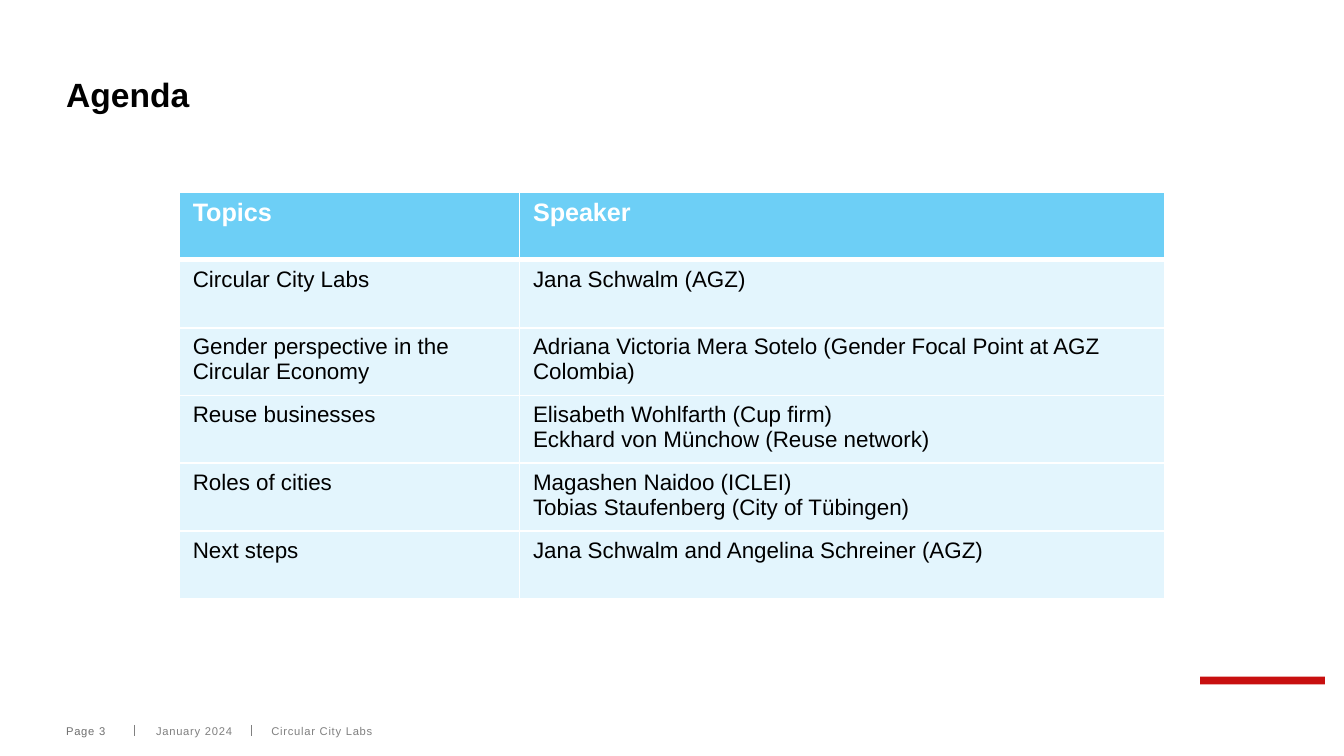
from dataclasses import dataclass

from pptx import Presentation
from pptx.dml.color import RGBColor
from pptx.enum.shapes import MSO_CONNECTOR, MSO_SHAPE
from pptx.enum.text import MSO_ANCHOR, MSO_AUTO_SIZE, PP_ALIGN
from pptx.oxml.ns import qn
from pptx.oxml.xmlchemy import OxmlElement
from pptx.util import Cm, Pt


@dataclass(frozen=True)
class Theme:
    font: str = "Arial"
    ink: str = "000000"
    paper: str = "FFFFFF"
    sky: str = "6DCFF6"
    accent: str = "C80F0F"
    muted: str = "808080"
    page_number: str = "6F6F6F"
    body_opacity: int = 19
    title_size: float = 18
    header_size: float = 13.5
    body_size: float = 12
    footer_size: float = 6
    grid_width: float = 1
    header_rule_width: float = 3


def add_child(parent, tag, **attributes):
    child = OxmlElement(tag)
    for name, value in attributes.items():
        child.set(name, str(value))
    parent.append(child)
    return child


class AgendaSlide:
    def __init__(self, presentation, theme):
        self.theme = theme
        self.slide = presentation.slides.add_slide(presentation.slide_layouts[5])
        self.shapes = self.slide.shapes

    def style_text(self, frame, size, color, bold=False):
        font_values = {"name": self.theme.font, "size": Pt(size), "bold": bold}
        for paragraph in frame.paragraphs:
            paragraph.alignment = PP_ALIGN.LEFT
            for run in paragraph.runs:
                for name, value in font_values.items():
                    setattr(run.font, name, value)
                run.font.color.rgb = RGBColor.from_string(color)

    def format_frame(self, frame, anchor, auto_size, right=0):
        values = {"margin_left": 0, "margin_top": 0, "margin_right": Cm(right),
                  "margin_bottom": 0, "word_wrap": True,
                  "vertical_anchor": anchor, "auto_size": auto_size}
        for name, value in values.items():
            setattr(frame, name, value)

    def title(self, text, left, top, width, height):
        title = self.shapes.title
        title.left, title.top = Cm(left), Cm(top)
        title.width, title.height = Cm(width), Cm(height)
        frame = title.text_frame
        frame.text = text
        self.format_frame(frame, MSO_ANCHOR.BOTTOM, MSO_AUTO_SIZE.NONE, right=0.2)
        frame.paragraphs[0].line_spacing = 0.9
        self.style_text(frame, self.theme.title_size, self.theme.ink, bold=True)

    def bar(self, left, top, width, height):
        bar = self.shapes.add_shape(
            MSO_SHAPE.RECTANGLE, Cm(left), Cm(top), Cm(width), Cm(height))
        bar.shadow.inherit = False
        bar.fill.solid()
        bar.fill.fore_color.rgb = RGBColor.from_string(self.theme.accent)
        bar.line.fill.background()

    def divider(self, x, top, height):
        divider = self.shapes.add_connector(
            MSO_CONNECTOR.STRAIGHT, Cm(x), Cm(top), Cm(x), Cm(top + height))
        divider.line.color.rgb = RGBColor.from_string(self.theme.muted)
        divider.line.width = Pt(0.75)
        add_child(divider.element.spPr, "a:effectLst")

    def footer(self, text, left, top, width, height, color):
        box = self.shapes.add_textbox(Cm(left), Cm(top), Cm(width), Cm(height))
        frame = box.text_frame
        frame.text = text
        self.format_frame(frame, MSO_ANCHOR.MIDDLE, MSO_AUTO_SIZE.SHAPE_TO_FIT_TEXT)
        self.style_text(frame, self.theme.footer_size, color)
        frame.paragraphs[0].runs[0].font._element.set("spc", "40")

    def fill_cell(self, cell, opacity):
        cell.fill.solid()
        cell.fill.fore_color.rgb = RGBColor.from_string(self.theme.sky)
        if opacity < 100:
            color = cell._tc.tcPr.find(qn("a:solidFill"))[0]
            add_child(color, "a:alpha", val=opacity * 1000)

    def border_cell(self, cell, top, bottom):
        """Draw all four borders, placed ahead of the fill as the schema asks."""
        grid = self.theme.grid_width
        widths = {"a:lnL": grid, "a:lnR": grid, "a:lnT": top, "a:lnB": bottom}
        properties = cell._tc.get_or_add_tcPr()
        for position, (tag, width) in enumerate(widths.items()):
            border = OxmlElement(tag)
            border.set("w", str(Pt(width)))
            add_child(add_child(border, "a:solidFill"), "a:srgbClr",
                      val=self.theme.paper)
            properties.insert(position, border)

    def table(self, rows, left, top, column_widths, row_height):
        theme = self.theme
        table = self.shapes.add_table(
            len(rows), len(column_widths), Cm(left), Cm(top),
            Cm(sum(column_widths)), Cm(row_height * len(rows))).table
        for column, width in zip(table.columns, column_widths):
            column.width = Cm(width)
        for row_index, texts in enumerate(rows):
            table.rows[row_index].height = Cm(row_height)
            is_header = row_index == 0
            top_width = theme.header_rule_width if row_index == 1 else theme.grid_width
            bottom_width = theme.header_rule_width if is_header else theme.grid_width
            for column_index, text in enumerate(texts):
                cell = table.cell(row_index, column_index)
                cell.text = text
                if is_header:
                    self.style_text(cell.text_frame, theme.header_size,
                                    theme.paper, bold=True)
                else:
                    self.style_text(cell.text_frame, theme.body_size, theme.ink)
                self.fill_cell(cell, 100 if is_header else theme.body_opacity)
                self.border_cell(cell, top_width, bottom_width)


AGENDA = [
    ("Topics", "Speaker"),
    ("Circular City Labs", "Jana Schwalm (AGZ)"),
    ("Gender perspective in the Circular Economy",
     "Adriana Victoria Mera Sotelo (Gender Focal Point at AGZ Colombia)"),
    ("Reuse businesses",
     "Elisabeth Wohlfarth (Cup firm)\nEckhard von Münchow (Reuse network)"),
    ("Roles of cities",
     "Magashen Naidoo (ICLEI)\nTobias Staufenberg (City of Tübingen)"),
    ("Next steps", "Jana Schwalm and Angelina Schreiner (AGZ)"),
]


def main():
    presentation = Presentation()
    presentation.slide_width, presentation.slide_height = Cm(25.4), Cm(14.28)
    theme = Theme()
    agenda = AgendaSlide(presentation, theme)
    margin, footer_top = 1.25, 13.69

    agenda.bar(22.68, 12.78, 2.36, 0.15)
    for divider_x in (4.75, 2.54):
        agenda.divider(divider_x, footer_top, 0.22)
    agenda.title("Agenda", margin, 0.66, 23.8, 1.5)
    for text, left, width, color in (
        ("January 2024", 2.95, 1.47, theme.muted),
        ("Circular City Labs", 5.13, 16.05, theme.muted),
        ("Page 3", margin, 1.24, theme.page_number),
    ):
        agenda.footer(text, left, footer_top, width, 0.25, color)
    agenda.table(AGENDA, 3.39, 3.63, (6.43, 12.19), 1.28)

    presentation.save("out.pptx")


if __name__ == "__main__":
    main()
